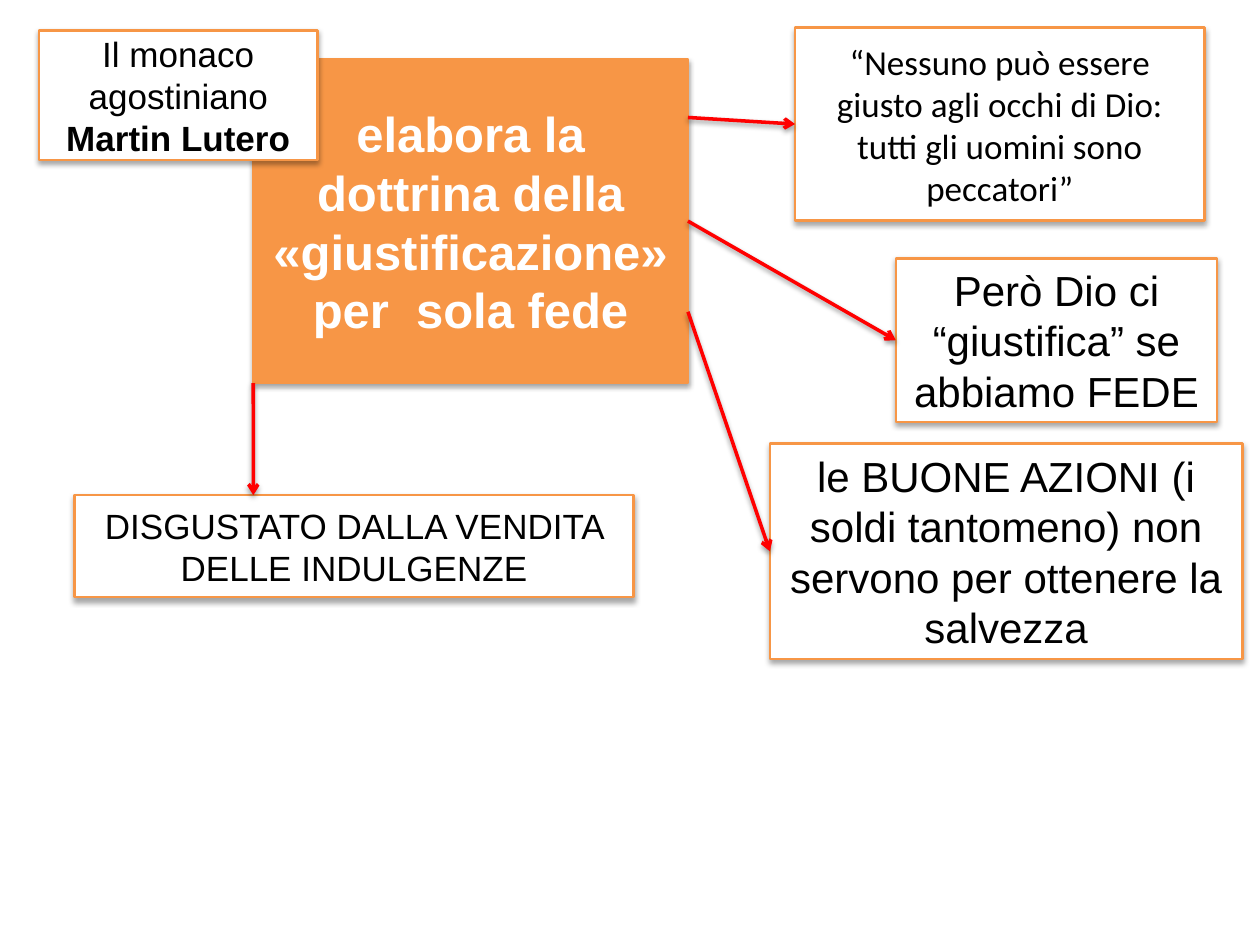
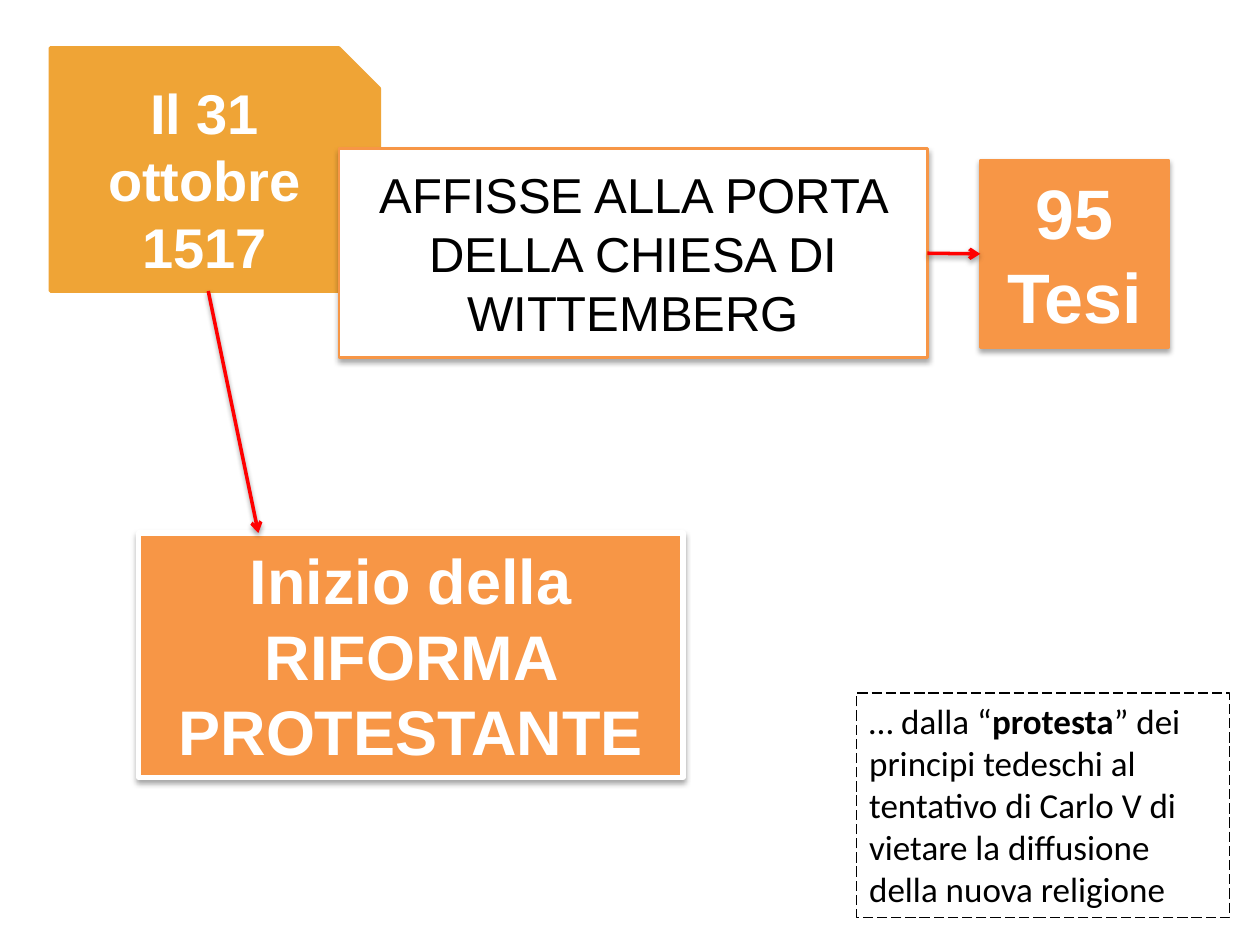
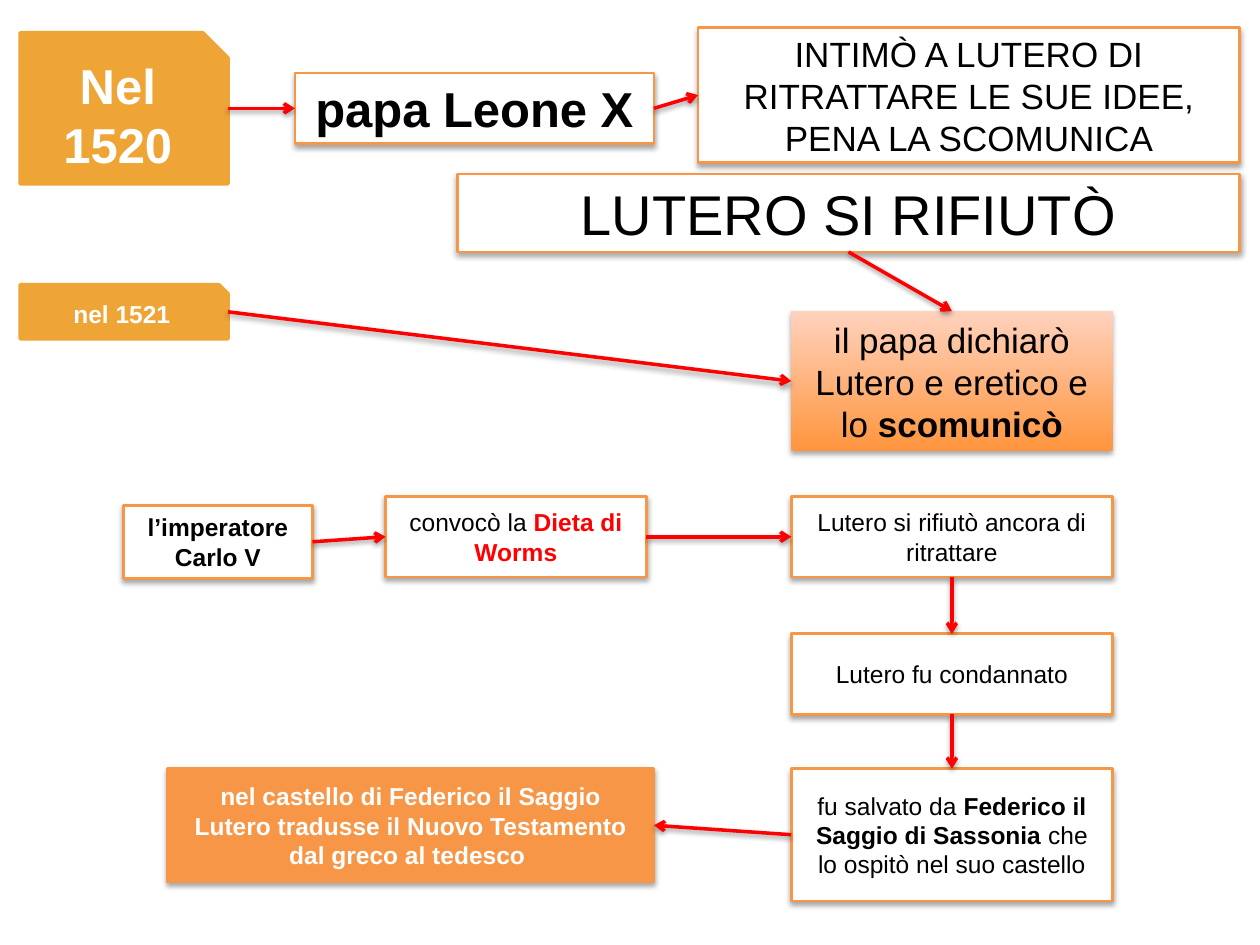
from lxml.etree import SubElement
from pptx import Presentation
from pptx.dml.color import RGBColor
from pptx.enum.dml import MSO_LINE
from pptx.enum.shapes import MSO_CONNECTOR, MSO_SHAPE
from pptx.enum.text import MSO_ANCHOR, PP_ALIGN
from pptx.oxml.ns import qn
from pptx.util import Inches, Pt

COLORS = {
    "orange": "F79646",
    "amber": "EFA436",
    "peach": "FFD2BD",
    "bright": "FF953E",
    "red": "FF0000",
    "white": "FFFFFF",
    "black": "000000",
}


def rgb(name):
    return RGBColor.from_string(COLORS[name])


def add_shadow(sp, alpha, dist):
    spPr = sp._element.spPr
    effects = spPr.find(qn("a:effectLst"))
    if effects is None:
        effects = SubElement(spPr, qn("a:effectLst"))
    outer = SubElement(effects, qn("a:outerShdw"), blurRad=str(Pt(3.1)), dist=str(Pt(dist)),
                       dir="5400000", rotWithShape="0")
    color = SubElement(outer, qn("a:srgbClr"), val=COLORS["black"])
    SubElement(color, qn("a:alpha"), val=str(alpha * 1000))


def write(sp, text, size, color, bold=False, font="Arial", accent=None,
          align=PP_ALIGN.CENTER, anchor=MSO_ANCHOR.MIDDLE):
    tf = sp.text_frame
    tf.word_wrap = True
    tf.vertical_anchor = anchor
    p = tf.paragraphs[0]
    p.alignment = align
    p.font.name = font
    p.font.size = Pt(size)
    p.font.color.rgb = rgb(color)
    p.font.bold = bold
    for i, part in enumerate(text.split("*")):
        if part:
            r = p.add_run()
            r.text = part
            if i % 2:
                r.font.bold = True
                if accent:
                    r.font.color.rgb = rgb(accent)
    return sp


def add_box(s, box, at, fill=None, line=None, width=1.5, kind=MSO_SHAPE.RECTANGLE):
    left, top = box[0] + at[0], box[1] + at[1]
    sp = s.shapes.add_shape(kind, *(Inches(v) for v in (left, top, at[2], at[3])))
    sp.shadow.inherit = False
    if fill:
        sp.fill.solid()
        sp.fill.fore_color.rgb = rgb(fill)
    else:
        sp.fill.background()
    if line:
        sp.line.color.rgb = rgb(line)
        sp.line.width = Pt(width)
    else:
        sp.line.fill.background()
    return sp


def add_card(s, box, at, text, size, **style):
    sp = add_box(s, box, at, "white", "orange")
    add_shadow(sp, 35, 1.8)
    return write(sp, text, size, "black", **style)


def add_key(s, box, at, text, size, line="orange", width=1.5):
    sp = add_box(s, box, at, "orange", line, width)
    add_shadow(sp, 35, 1.8)
    return write(sp, text, size, "white", bold=True)


def add_date(s, box, at, text, size):
    sp = add_box(s, box, at, "amber", "amber", 2, MSO_SHAPE.SNIP_1_RECTANGLE)
    write(sp, text, size, "white", bold=True, anchor=MSO_ANCHOR.TOP)
    tf = sp.text_frame
    tf.margin_top = tf.margin_bottom = Inches(0.08)
    return sp


def add_arrow(s, start, end, leave=(1, 0.5), arrive=(0, 0.5)):
    points = []
    for sp, (fx, fy) in ((start, leave), (end, arrive)):
        points += [round(sp.left + fx * sp.width), round(sp.top + fy * sp.height)]
    c = s.shapes.add_connector(MSO_CONNECTOR.STRAIGHT, *points)
    c.line.color.rgb = rgb("red")
    c.line.width = Pt(2)
    SubElement(c.line._get_or_add_ln(), qn("a:tailEnd"), type="arrow")
    add_shadow(c, 38, 1.6)


def add_doctrine(s, box):
    doctrine = add_key(s, box, (1.7, 0.25, 3.45, 2.57),
                       "elabora la dottrina della «giustificazione» per  sola fede", 28)
    add_card(s, box, (0, 0.02, 2.21, 1.03), "Il monaco agostiniano *Martin Lutero*", 20)
    indulgences = add_card(s, box, (0.28, 3.71, 4.44, 0.81),
                           "DISGUSTATO DALLA VENDITA DELLE INDULGENZE", 20)
    faith = add_card(s, box, (6.8, 1.83, 2.55, 1.3), "Però Dio ci “giustifica” se abbiamo FEDE", 24)
    works = add_card(s, box, (5.8, 3.3, 3.75, 1.71),
                     "le BUONE AZIONI (i soldi tantomeno) non servono per ottenere la salvezza", 24)
    sinners = add_card(s, box, (6, 0, 3.25, 1.53),
                       "“Nessuno può essere giusto agli occhi di Dio: tutti gli uomini sono peccatori”",
                       20, font="Calibri")
    add_arrow(s, doctrine, indulgences, (0, 1), (0.32, 0))
    for target, height in ((sinners, 0.18), (faith, 0.5), (works, 0.78)):
        add_arrow(s, doctrine, target, (1, height))


def add_theses(s, box):
    date = add_date(s, box, (0, 0, 2.61, 1.93), "Il 31 ottobre 1517", 32)
    church = add_card(s, box, (2.29, 0.8, 4.67, 1.66),
                      "AFFISSE ALLA PORTA DELLA CHIESA DI WITTEMBERG", 28)
    theses = add_key(s, box, (7.38, 0.89, 1.5, 1.49), "95 Tesi", 40)
    reform = add_key(s, box, (0.7, 3.85, 4.32, 1.94), "Inizio della RIFORMA PROTESTANTE",
                     36, "white", 3)
    add_arrow(s, church, theses)
    add_arrow(s, date, reform, (0.48, 1), (0.22, 0))


def add_protest_note(s, box):
    sp = add_box(s, box, (0, 0, box[2], box[3]), line="black", width=0.75)
    sp.line.dash_style = MSO_LINE.LONG_DASH
    write(sp, "… dalla “*protesta*” dei principi tedeschi al tentativo di Carlo V "
          "di vietare la diffusione della nuova religione",
          20, "black", font="Calibri", align=PP_ALIGN.LEFT, anchor=MSO_ANCHOR.TOP)


def add_excommunication(s, box):
    date_1520 = add_date(s, box, (0, 0.04, 1.65, 1.2), "Nel 1520", 28)
    pope = add_card(s, box, (2.18, 0.36, 2.85, 0.56), "papa Leone X", 28, bold=True)
    order = add_card(s, box, (5.38, 0, 4.3, 1.07),
                     "INTIMÒ A LUTERO DI RITRATTARE LE SUE IDEE, PENA LA SCOMUNICA", 20)
    refusal = add_card(s, box, (3.47, 1.16, 6.21, 0.62), "LUTERO SI RIFIUTÒ", 32)
    date_1521 = add_date(s, box, (0, 2.04, 1.65, 0.43), "nel 1521", 14)
    ban = add_box(s, box, (6.12, 2.25, 2.55, 1.11))
    ban.fill.gradient()
    ban.fill.gradient_angle = 90
    for stop, color in zip(ban.fill.gradient_stops, ("bright", "peach")):
        stop.color.rgb = rgb(color)
    add_shadow(ban, 35, 1.8)
    write(ban, "il papa dichiarò Lutero e eretico e lo *scomunicò*", 20, "black")
    add_arrow(s, date_1520, pope)
    add_arrow(s, pope, order)
    add_arrow(s, date_1521, ban)
    add_arrow(s, refusal, ban, (0.5, 1), (0.5, 0))


def add_worms(s, box):
    emperor = add_card(s, box, (0, 0.07, 1.5, 0.58), "l’imperatore Carlo V", 14, bold=True)
    diet = add_card(s, box, (2.08, 0, 2.07, 0.64), "convocò la *Dieta di Worms*", 14, accent="red")
    refusal = add_card(s, box, (5.3, 0, 2.55, 0.64), "Lutero si rifiutò ancora di ritrattare", 14)
    sentence = add_card(s, box, (5.3, 1.09, 2.55, 0.64), "Lutero fu condannato", 14)
    rescue = add_card(s, box, (5.3, 2.16, 2.55, 1.05),
                      "fu salvato da *Federico il Saggio di Sassonia *che lo ospitò nel suo castello", 14)
    castle = add_key(s, box, (0.35, 2.16, 3.86, 0.9),
                     "nel castello di Federico il Saggio Lutero tradusse il Nuovo Testamento "
                     "dal greco al tedesco ", 14)
    add_arrow(s, emperor, diet)
    add_arrow(s, diet, refusal)
    add_arrow(s, refusal, sentence, (0.5, 1), (0.5, 0))
    add_arrow(s, sentence, rescue, (0.5, 1), (0.5, 0))
    add_arrow(s, rescue, castle, (0, 0.5), (1, 0.5))


def main():
    prs = Presentation()
    prs.slide_width, prs.slide_height = Inches(10), Inches(7.5)
    slides = (
        ((add_doctrine, (0.31, 0.22, 9.55, 5.01)),),
        ((add_theses, (0.4, 0.38, 8.88, 5.79)), (add_protest_note, (6.8, 5.5, 2.96, 1.78))),
        ((add_excommunication, (0.16, 0.22, 9.68, 3.36)), (add_worms, (0.98, 3.94, 7.85, 3.21))),
    )
    for regions in slides:
        s = prs.slides.add_slide(prs.slide_layouts[6])
        for add_region, box in regions:
            add_region(s, box)
    prs.save("out.pptx")


if __name__ == "__main__":
    main()
